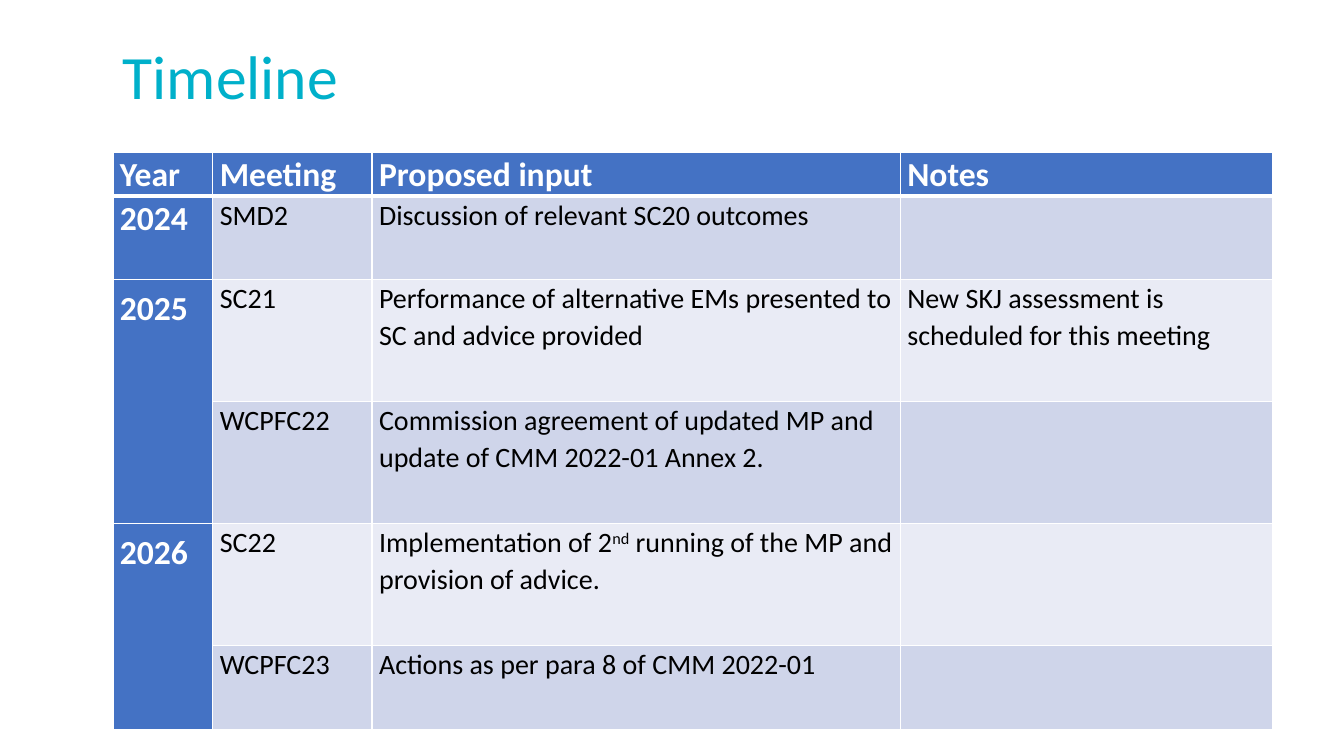
from lxml import etree
from pptx import Presentation
from pptx.dml.color import RGBColor
from pptx.enum.text import MSO_ANCHOR, PP_ALIGN as Align
from pptx.oxml.ns import qn
from pptx.util import Inches, Pt

FONT = "Calibri"
WHITE, BLACK, TEAL, BLUE = "FFFFFF", "000000", "00B0CA", "4472C4"
BANDS = ("CFD5EA", "E9EBF5")

COLUMN_WIDTHS = (0.99, 1.58, 5.24, 3.69)
ROW_HEIGHTS = (0.43, 0.83, 1.21, 1.21, 1.21, 0.83)
YEAR_SPANS = ((2, 3), (4, 5))
ROWS = (
    ("Year", "Meeting", "Proposed input", "Notes"),
    ("2024", "SMD2", "Discussion of relevant SC20 outcomes", ""),
    ("2025", "SC21",
     "Performance of alternative EMs presented to SC and advice provided",
     "New SKJ assessment is scheduled for this meeting"),
    ("", "WCPFC22",
     "Commission agreement of updated MP and update of CMM 2022-01 Annex 2.", ""),
    ("2026", "SC22",
     ("Implementation of 2", "nd", " running of the MP and provision of advice."), ""),
    ("", "WCPFC23", "Actions as per para 8 of CMM 2022-01", ""),
)

HEADING = {"size": Pt(24), "bold": True, "name": FONT}
BODY = {"size": Pt(20), "bold": False, "name": FONT}
TITLE = {"size": Pt(44), "bold": False, "name": FONT}


def rgb(value):
    return RGBColor.from_string(value)


def set_all(target, values):
    for name, value in values.items():
        setattr(target, name, value)


def write(para, text, look, color):
    """Write text; in a tuple of parts every second one is superscript."""
    parts = text if isinstance(text, tuple) else (text,)
    for index, part in enumerate(parts):
        span = para.add_run()
        span.text = part
        set_all(span.font, look)
        span.font.color.rgb = rgb(color)
        if index % 2:
            span._r.get_or_add_rPr().set("baseline", "30000")


def add_borders(cell, bottom, top):
    properties = cell._tc.get_or_add_tcPr()
    for side, width in (("L", 1), ("R", 1), ("T", top), ("B", bottom)):
        line = etree.SubElement(properties, qn(f"a:ln{side}"), w=str(Pt(width)))
        fill = etree.SubElement(line, qn("a:solidFill"))
        etree.SubElement(fill, qn("a:srgbClr"), val=WHITE)


def add_title(page, left, top, width, height):
    box = page.shapes.add_textbox(*map(Inches, (left, top, width, height)))
    set_all(box.text_frame, {"word_wrap": True, "vertical_anchor": MSO_ANCHOR.TOP})
    para = box.text_frame.paragraphs[0]
    para.line_spacing = 0.9
    write(para, "Timeline", TITLE, TEAL)


def fill_cell(cell, text, row, column):
    is_heading = row == 0 or column == 0
    is_merged_year = column == 0 and row > 1
    inset = Inches(0.06 if is_merged_year else 0)
    set_all(cell, {
        "margin_left": Inches(0.07), "margin_right": Inches(0.07),
        "margin_top": inset, "margin_bottom": inset,
        "vertical_anchor": MSO_ANCHOR.TOP,
    })
    add_borders(cell, bottom=3 if row == 0 else 1, top=3 if row == 1 else 1)
    cell.fill.solid()
    cell.fill.fore_color.rgb = rgb(BLUE if is_heading else BANDS[(row - 1) % 2])
    if text:
        para = cell.text_frame.paragraphs[0]
        justified = row == 0 or column < 2
        set_all(para, {
            "alignment": Align.JUSTIFY if justified else Align.LEFT,
            "line_spacing": 1.07, "space_after": Pt(8),
        })
        write(para, text, HEADING if is_heading else BODY,
              WHITE if is_heading else BLACK)


def add_timeline(page, left, top):
    size = sum(COLUMN_WIDTHS), sum(ROW_HEIGHTS)
    frame = page.shapes.add_table(len(ROWS), len(COLUMN_WIDTHS),
                                  *map(Inches, (left, top, *size)))
    table = frame.table
    for column, width in zip(table.columns, COLUMN_WIDTHS):
        column.width = Inches(width)
    for row, height in zip(table.rows, ROW_HEIGHTS):
        row.height = Inches(height)
    for row, texts in enumerate(ROWS):
        for column, text in enumerate(texts):
            fill_cell(table.cell(row, column), text, row, column)
    # Years that cover two meetings
    for first, last in YEAR_SPANS:
        table.cell(first, 0).merge(table.cell(last, 0))


def main():
    deck = Presentation()
    set_all(deck, {"slide_width": Inches(13.33), "slide_height": Inches(7.5)})
    page = deck.slides.add_slide(deck.slide_layouts[6])
    page.background.fill.solid()
    page.background.fill.fore_color.rgb = rgb(WHITE)
    add_timeline(page, 1.12, 1.51)
    add_title(page, 1.12, 0.41, 11.5, 1.1)
    deck.save("out.pptx")


if __name__ == "__main__":
    main()
